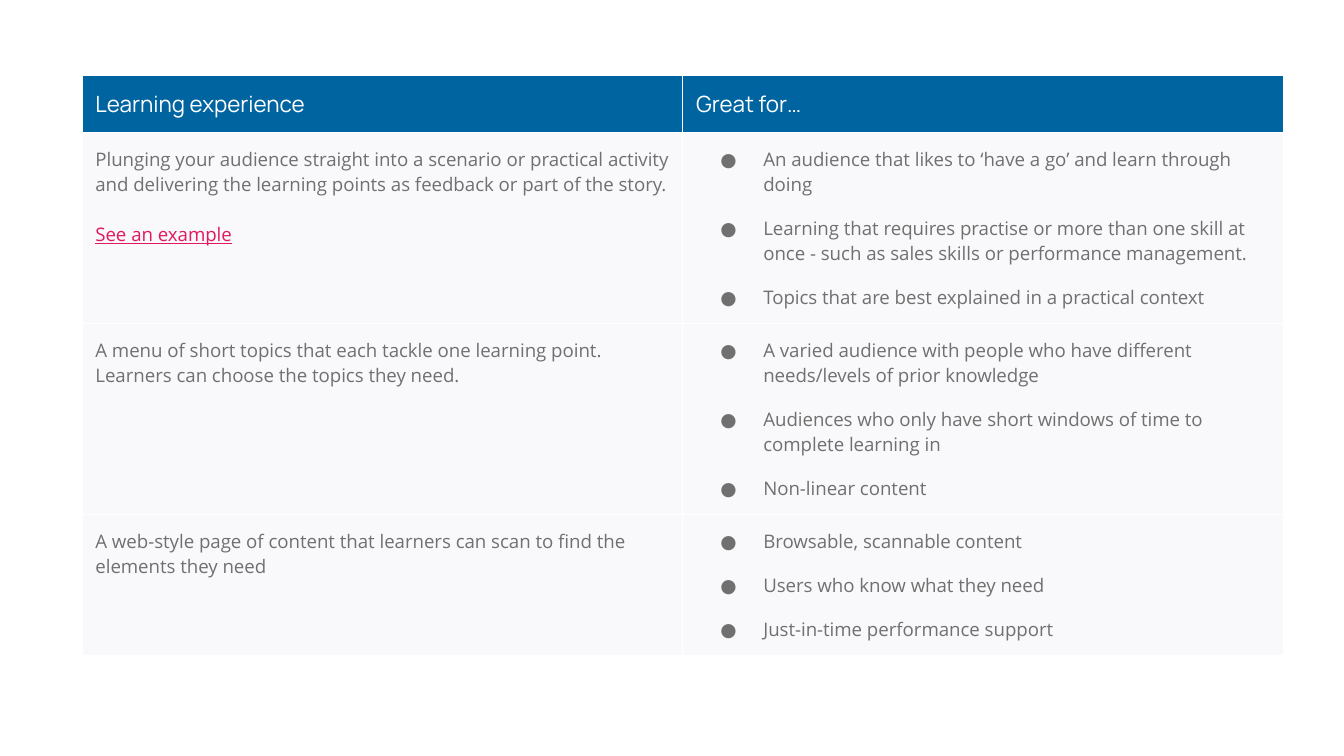
import pptx
import pptx.util
import pptx.dml.color
import pptx.oxml
import pptx.oxml.ns
from pptx.util import Inches

COLORS = {"header": "0064A1", "cell": "F9F9FB", "text": "707070",
          "link": "E1195F", "white": "FFFFFF"}
HEADINGS = ["Learning experience", "Great for…"]
LINK = "See an example"
# Row height, description paragraphs, suitable uses
EXPERIENCES = [
    (1.42,
     ["Plunging your audience straight into a scenario or practical activity and "
      "delivering the learning points as feedback or part of the story.", LINK],
     ["An audience that likes to ‘have a go’ and learn through doing",
      "Learning that requires practise or more than one skill at once - such as "
      "sales skills or performance management.",
      "Topics that are best explained in a practical context"]),
    (1.42,
     ["A menu of short topics that each tackle one learning point. Learners can "
      "choose the topics they need."],
     ["A varied audience with people who have different needs/levels of prior knowledge",
      "Audiences who only have short windows of time to complete learning in",
      "Non-linear content"]),
    (1.04,
     ["A web-style page of content that learners can scan to find the elements they need"],
     ["Browsable, scannable content",
      "Users who know what they need",
      "Just-in-time performance support"]),
]
LEFT, TOP, COL_WIDTH, HEADER_HEIGHT = 0.61, 0.56, 4.47, 0.42
MARGIN = 0.1


def rgb(name):
    return pptx.dml.color.RGBColor.from_string(COLORS[name])


def add_xml(parent, xml):
    ns = pptx.oxml.ns.nsdecls("a")
    parent.append(pptx.oxml.parse_xml(xml.replace(" NS", " " + ns)))


def add_bullet(p, font, size):
    pPr = p._p.get_or_add_pPr()
    pPr.set("marL", str(Inches(0.5)))
    pPr.set("indent", str(Inches(-0.32)))
    add_xml(pPr, f'<a:buClr NS><a:srgbClr val="{COLORS["text"]}"/></a:buClr>')
    add_xml(pPr, f'<a:buSzPts NS val="{size * 100}"/>')
    add_xml(pPr, f'<a:buFont NS typeface="{font}"/>')
    add_xml(pPr, '<a:buChar NS char="●"/>')


def write(p, text, font="Open Sans", size=10, color="text", underline=None,
          bullet=False, before=None, after=None):
    if bullet:
        add_bullet(p, font, size)
    if before is not None:
        p.space_before = pptx.util.Pt(before)
    if after is not None:
        p.space_after = pptx.util.Pt(after)
    r = p.add_run()
    r.text = text
    r.font.name = font
    r.font.size = pptx.util.Pt(size)
    r.font.color.rgb = rgb(color)
    r.font.underline = underline


def style_cell(cell, fill):
    cell.margin_left = cell.margin_right = Inches(MARGIN)
    cell.margin_top = cell.margin_bottom = Inches(MARGIN)
    tcPr = cell._tc.get_or_add_tcPr()
    for side in "LRTB":
        add_xml(tcPr, f'<a:ln{side} NS w="{pptx.util.Pt(0.75)}"><a:solidFill>'
                      f'<a:srgbClr val="{COLORS["white"]}"/></a:solidFill></a:ln{side}>')
    cell.fill.solid()
    cell.fill.fore_color.rgb = rgb(fill)


def fill_cell(cell, texts, fill="cell", bullet=False, **fmt):
    style_cell(cell, fill)
    tf = cell.text_frame
    for i, text in enumerate(texts):
        p = tf.add_paragraph() if i else tf.paragraphs[0]
        style = dict(fmt, bullet=bullet)
        if i:
            style["before"] = 10 if bullet else 13
        if bullet and i == len(texts) - 1:
            style["after"] = 10
        if text == LINK:
            style.update(color="link", underline=True)
        write(p, text, **style)


def main():
    prs = pptx.Presentation()
    prs.slide_width = Inches(10)
    prs.slide_height = prs.slide_width * 9 // 16
    s = prs.slides.add_slide(prs.slide_layouts[6])

    heights = [HEADER_HEIGHT] + [height for height, _, _ in EXPERIENCES]
    table = s.shapes.add_table(
        len(heights), len(HEADINGS), Inches(LEFT), Inches(TOP),
        Inches(COL_WIDTH * len(HEADINGS)), Inches(sum(heights))).table
    table.horz_banding = False
    for column in table.columns:
        column.width = Inches(COL_WIDTH)
    for row, height in zip(table.rows, heights):
        row.height = Inches(height)

    for c, heading in enumerate(HEADINGS):
        fill_cell(table.cell(0, c), [heading], fill="header",
                  font="Manrope", size=12, color="white")
    for r, (_, description, uses) in enumerate(EXPERIENCES, start=1):
        fill_cell(table.cell(r, 0), description)
        fill_cell(table.cell(r, 1), uses, bullet=True)

    prs.save("out.pptx")


if __name__ == "__main__":
    main()
